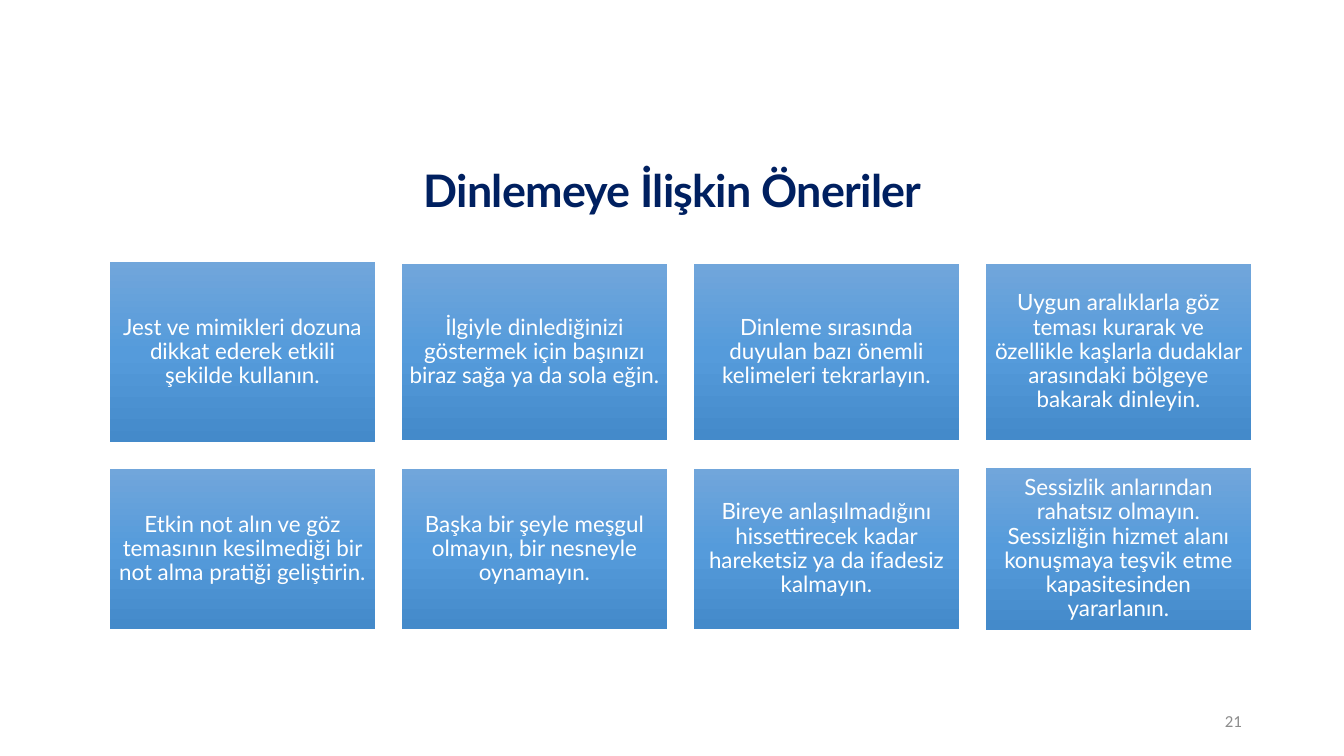
from copy import deepcopy
from dataclasses import dataclass

from pptx import Presentation
from pptx import util as u
from pptx.dml.color import RGBColor
from pptx.enum import shapes, text
from pptx.oxml.ns import qn

DPI = 100.8


def px(n: int) -> int:
    return u.Emu(round(n * 914400 / DPI))


@dataclass(frozen=True)
class Theme:
    head: str = "002060"
    body: str = "FFFFFF"
    page: str = "8C8C8C"
    shade: tuple = ((0, "71A6DB"), (0.5, "559BDB"), (1, "448ACA"))
    font: str = "Lato"
    page_font: str = "Calibri"
    head_size: int = 32
    body_size: int = 16
    page_size: int = 12


@dataclass(frozen=True)
class Card:
    words: str
    col: int
    mid: int
    high: int


THEME = Theme()
LEFT, STEP, WIDE = 110, 292, 265
TOP_MID, LOW_MID = 352, 549
CARDS = (
    Card("Jest ve mimikleri dozuna dikkat ederek etkili şekilde kullanın.", 0, TOP_MID, 180),
    Card("İlgiyle dinlediğinizi göstermek için başınızı biraz sağa ya da sola eğin.", 1, TOP_MID, 176),
    Card("Dinleme sırasında duyulan bazı önemli kelimeleri tekrarlayın.", 2, TOP_MID, 176),
    Card("Uygun aralıklarla göz teması kurarak ve özellikle kaşlarla dudaklar "
         "arasındaki bölgeye bakarak dinleyin.", 3, TOP_MID, 176),
    Card("Etkin not alın ve göz temasının kesilmediği bir not alma pratiği geliştirin.", 0, LOW_MID, 160),
    Card("Başka bir şeyle meşgul olmayın, bir nesneyle oynamayın.", 1, LOW_MID, 160),
    Card("Bireye anlaşılmadığını hissettirecek kadar hareketsiz ya da ifadesiz kalmayın.", 2, LOW_MID, 160),
    Card("Sessizlik anlarından rahatsız olmayın. Sessizliğin hizmet alanı konuşmaya "
         "teşvik etme kapasitesinden yararlanın.", 3, LOW_MID, 162),
)


def write(shape, words: str, *, size: int, color: str, font: str = THEME.font,
          bold: bool = False, align=text.PP_ALIGN.CENTER, lead: float = 0.9,
          pad: int | None = None, track: int = 0) -> None:
    """Fill a shape with one paragraph; track is in hundredths of a point."""
    frame = shape.text_frame
    frame.word_wrap = True
    frame.auto_size = text.MSO_AUTO_SIZE.NONE
    frame.vertical_anchor = text.MSO_ANCHOR.MIDDLE
    if pad is not None:
        frame.margin_left = frame.margin_right = px(pad)
        frame.margin_top = frame.margin_bottom = px(pad)
    para = frame.paragraphs[0]
    para.alignment = align
    para.line_spacing = lead
    run = para.add_run()
    run.text = words
    run.font.size = u.Pt(size)
    run.font.name = font
    run.font.bold = bold
    run.font.color.rgb = RGBColor.from_string(color)
    if track:
        run._r.get_or_add_rPr().set("spc", str(track))


def shade(shape) -> None:
    """Give a shape the theme's gradient, running from top to bottom."""
    fill = shape.fill
    fill.gradient()
    fill.gradient_angle = 270
    stops = shape._element.spPr.find(".//" + qn("a:gsLst"))
    stops.append(deepcopy(stops[0]))
    for stop, (place, color) in zip(fill.gradient_stops, THEME.shade):
        stop.position = place
        stop.color.rgb = RGBColor.from_string(color)


def draw(slide, card: Card) -> None:
    box = slide.shapes.add_shape(
        shapes.MSO_SHAPE.RECTANGLE, px(LEFT + card.col * STEP),
        px(card.mid - card.high // 2), px(WIDE), px(card.high))
    box.shadow.inherit = False
    box.line.fill.background()
    shade(box)
    write(box, card.words, size=THEME.body_size, color=THEME.body, pad=7)


def main() -> None:
    deck = Presentation()
    deck.slide_width, deck.slide_height = px(1344), px(756)
    slide = deck.slides.add_slide(deck.slide_layouts[5])
    title = slide.shapes.title
    title.left, title.top, title.width, title.height = map(px, (93, 120, 1159, 146))
    write(title, "Dinlemeye İlişkin Öneriler", size=THEME.head_size,
          color=THEME.head, bold=True, track=-50)
    for card in CARDS:
        draw(slide, card)
    page = slide.shapes.add_textbox(*map(px, (950, 701, 302, 40)))
    write(page, "21", size=THEME.page_size, color=THEME.page,
          font=THEME.page_font, align=text.PP_ALIGN.RIGHT, lead=1.0)
    deck.save("out.pptx")


if __name__ == "__main__":
    main()
